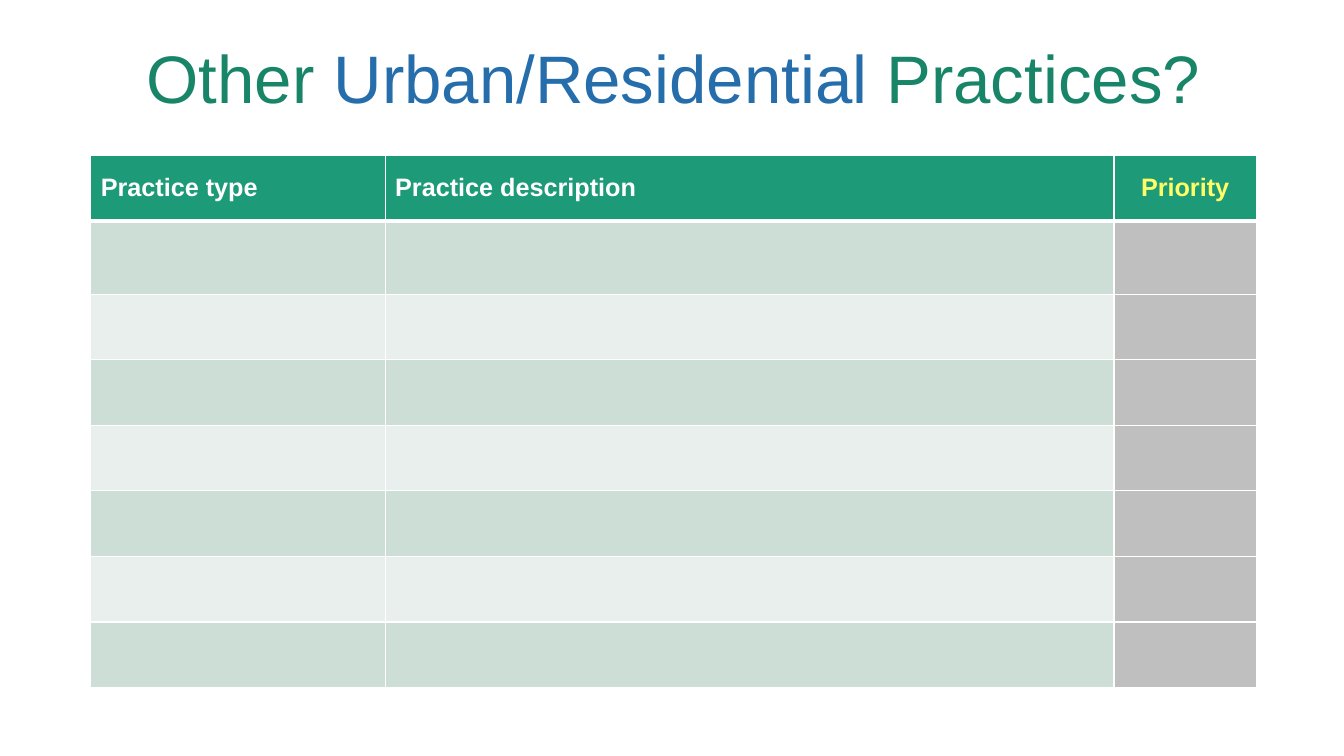
from dataclasses import dataclass

import pptx
import pptx.dml.color
import pptx.enum.text
import pptx.oxml
import pptx.oxml.ns
import pptx.util
from pptx.dml.color import RGBColor
from pptx.util import Inches, Pt

WHITE = RGBColor(0xFF, 0xFF, 0xFF)
GREEN = RGBColor(0x19, 0x85, 0x68)
BLUE = RGBColor(0x25, 0x6E, 0xAB)
HEADER = RGBColor(0x1D, 0x9A, 0x78)
YELLOW = RGBColor(0xFF, 0xFF, 0x66)
BAND_DARK = RGBColor(0xCD, 0xDE, 0xD6)
BAND_LIGHT = RGBColor(0xE8, 0xEF, 0xEC)
GREY = RGBColor(0xBF, 0xBF, 0xBF)

LEFT = pptx.enum.text.PP_ALIGN.LEFT
CENTER = pptx.enum.text.PP_ALIGN.CENTER
MIDDLE = pptx.enum.text.MSO_ANCHOR.MIDDLE


@dataclass(frozen=True)
class Column:
    heading: str
    width: float
    color: RGBColor
    align: pptx.enum.text.PP_ALIGN
    bands: tuple[RGBColor, RGBColor]


COLUMNS = [
    Column("Practice type", 2.92, WHITE, LEFT, (BAND_DARK, BAND_LIGHT)),
    Column("Practice description", 7.23, WHITE, LEFT, (BAND_DARK, BAND_LIGHT)),
    Column("Priority", 1.41, YELLOW, CENTER, (GREY, GREY)),
]
ROW_HEIGHTS = [0.65, 0.73] + [0.65] * 6
TITLE_RUNS = [("Other ", GREEN), ("Urban/Residential", BLUE), (" Practices?", GREEN)]


def add_run(p, text: str, color: RGBColor, **fmt) -> None:
    r = p.add_run()
    r.text = text
    r.font.color.rgb = color
    for name, value in ({"name": "Arial"} | fmt).items():
        setattr(r.font, name, value)


def set_borders(cell, bottom: float, top: float) -> None:
    """Draw white cell borders, 1 pt at the sides."""
    tc_pr = cell._tc.get_or_add_tcPr()
    for side, width in {"L": 1, "R": 1, "T": top, "B": bottom}.items():
        tc_pr.append(pptx.oxml.parse_xml(
            f'<a:ln{side} {pptx.oxml.ns.nsdecls("a")} w="{Pt(width)}">'
            f'<a:solidFill><a:srgbClr val="{WHITE}"/></a:solidFill></a:ln{side}>'))


def fill_title(sp) -> None:
    box = {"left": 0.93, "top": 0.09, "width": 11.5, "height": 1.45}
    for name, value in box.items():
        setattr(sp, name, Inches(value))
    tf = sp.text_frame
    tf.vertical_anchor = MIDDLE
    p = tf.paragraphs[0]
    p.alignment = CENTER
    p.line_spacing = 0.9
    for text, color in TITLE_RUNS:
        add_run(p, text, color, size=Pt(48))


def add_practice_table(s) -> None:
    table = s.shapes.add_table(
        len(ROW_HEIGHTS), len(COLUMNS), Inches(0.9), Inches(1.54),
        Inches(sum(c.width for c in COLUMNS)), Inches(sum(ROW_HEIGHTS))).table
    for row, height in zip(table.rows, ROW_HEIGHTS):
        row.height = Inches(height)
    for j, column in enumerate(COLUMNS):
        table.columns[j].width = Inches(column.width)
        for i in range(len(ROW_HEIGHTS)):
            cell = table.cell(i, j)
            set_borders(cell, bottom=3 if i == 0 else 1, top=3 if i == 1 else 1)
            cell.fill.solid()
            cell.fill.fore_color.rgb = column.bands[(i - 1) % 2] if i else HEADER
        heading = table.cell(0, j)
        heading.vertical_anchor = MIDDLE
        p = heading.text_frame.paragraphs[0]
        p.alignment = column.align
        add_run(p, column.heading, column.color, size=Pt(18), bold=True)


def main() -> None:
    prs = pptx.Presentation()
    prs.slide_width, prs.slide_height = Inches(13.33), Inches(7.5)
    s = prs.slides.add_slide(prs.slide_layouts[5])
    add_practice_table(s)
    fill_title(s.shapes.title)
    prs.save("out.pptx")


if __name__ == "__main__":
    main()
